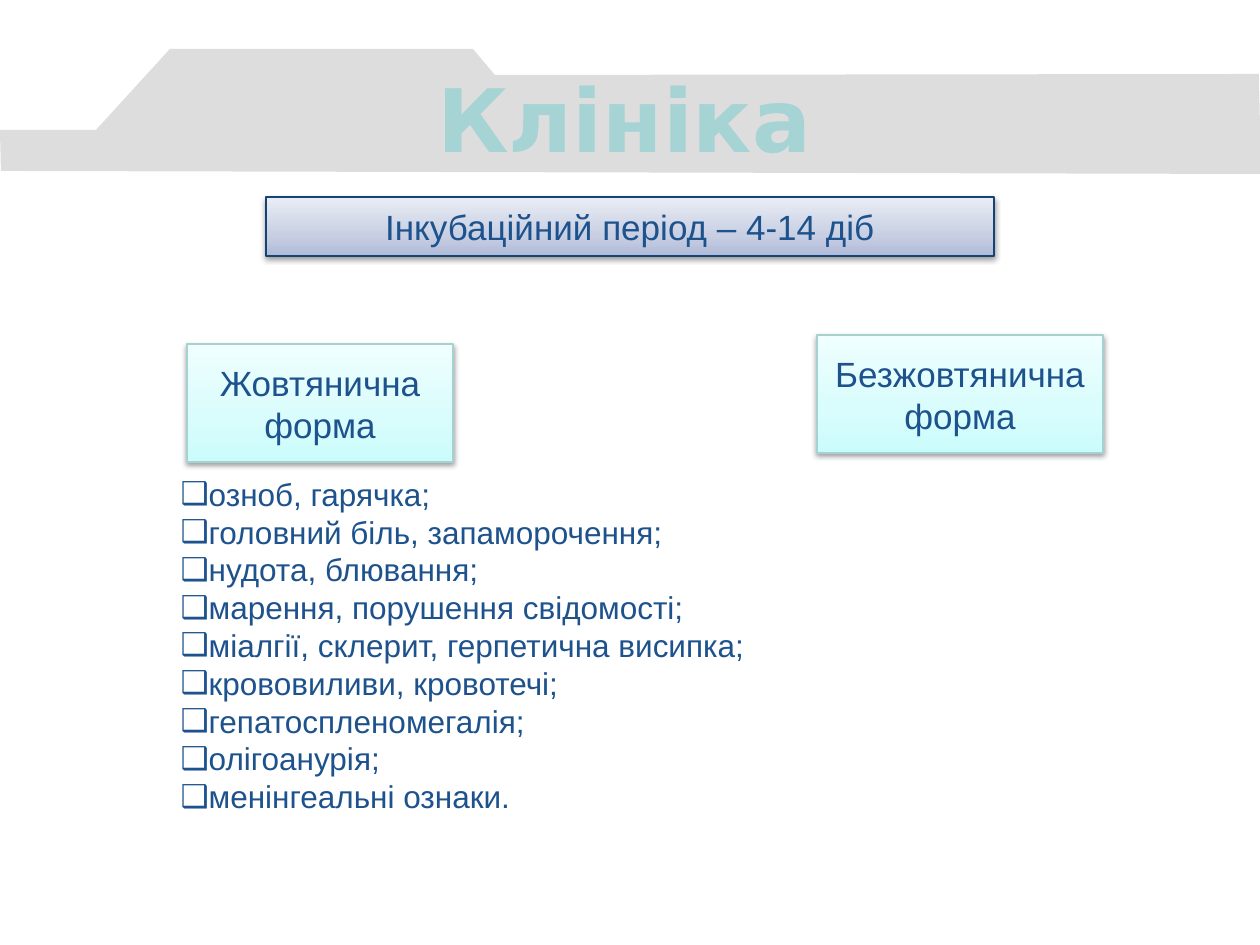
from lxml.etree import SubElement as Sub
from pptx import Presentation
from pptx.dml.color import RGBColor as RGB
from pptx.enum.shapes import MSO_SHAPE as Shape
from pptx.enum.text import MSO_ANCHOR as Anchor, MSO_AUTO_SIZE as Fit, PP_ALIGN as Align
from pptx.oxml import parse_xml
from pptx.oxml.ns import nsdecls, qn
from pptx.util import Pt

PX = 914400 / 126  # EMU in one px
HUE = {"band": "DDDDDD", "title": "A6D3D3", "text": "1D528D",
       "navy": "144378", "teal": "A7D1D1"}
BLUES = ["AFBBD8", "C8CFE3", "EAEDF5"]
AQUAS = ["CAFCFC", "D9FCFC", "EFFFFF"]


def emu(*nums):
    return [round(n * PX) for n in nums]


def write(shape, text, size=20, hue="text", font="Arial", bold=False,
          align=Align.CENTER, mark=None):
    frame = shape.text_frame
    frame.text = text
    frame.word_wrap = True
    frame.auto_size = Fit.NONE
    frame.vertical_anchor = Anchor.MIDDLE
    for para in frame.paragraphs:
        para.alignment = align
        para.space_before = Pt(0)
        if mark:
            props = para._p.get_or_add_pPr()
            props.set("marL", "0")
            props.set("indent", "0")
            Sub(props, qn("a:buFont"), typeface="Arial")
            Sub(props, qn("a:buChar"), char=mark)
        for run in para.runs:
            run.font.size = Pt(size)
            run.font.name = font
            run.font.bold = bold
            run.font.color.rgb = RGB.from_string(HUE[hue])


deck = Presentation()
deck.slide_width, deck.slide_height = emu(1260, 945)
slide = deck.slides.add_slide(deck.slide_layouts[1])
shapes = slide.shapes
title, body = slide.placeholders

# Grey band behind the title
edge = [(0, 130), (96, 130), (170, 49), (473, 49), (495, 75),
        (1259, 74), (1261, 174), (1, 171)]
path = shapes.build_freeform(*edge[0], scale=PX)
path.add_line_segments(edge[1:], close=True)
band = path.convert_to_shape()
band.shadow.inherit = False
band.fill.solid()
band.fill.fore_color.rgb = RGB.from_string(HUE["band"])
band.line.fill.background()
shapes._spTree.insert(2, band._element)

title.left, title.top, title.width, title.height = emu(84, 79, 1081, 78)
write(title, "Клініка", size=50, hue="title", font="DejaVu Sans", bold=True)

# Shaded boxes
boxes = [
    ("Інкубаційний період – 4-14 діб", (266, 197, 728, 59), BLUES, "navy"),
    ("Жовтянична форма", (187, 344, 266, 118), AQUAS, "teal"),
    ("Безжовтянична форма", (817, 335, 286, 118), AQUAS, "teal"),
]
for text, place, shades, rim in boxes:
    box = shapes.add_shape(Shape.RECTANGLE, *emu(*place))
    box.line.color.rgb = RGB.from_string(HUE[rim])
    box.line.width = Pt(0.75)
    stops = "".join(f'<a:gs pos="{pos}000"><a:srgbClr val="{shade}"/></a:gs>'
                    for pos, shade in zip((0, 35, 100), shades))
    props = box._element.spPr
    props.find(qn("a:prstGeom")).addnext(parse_xml(
        f'<a:gradFill {nsdecls("a")} rotWithShape="1"><a:gsLst>{stops}</a:gsLst>'
        '<a:lin ang="16200000" scaled="0"/></a:gradFill>'))
    props.append(parse_xml(
        f'<a:effectLst {nsdecls("a")}><a:outerShdw blurRad="40000" dist="20000" '
        'dir="5400000" rotWithShape="0"><a:srgbClr val="000000">'
        '<a:alpha val="38000"/></a:srgbClr></a:outerShdw></a:effectLst>'))
    write(box, text)

signs = [
    "озноб, гарячка;",
    "головний біль, запаморочення;",
    "нудота, блювання;",
    "марення, порушення свідомості;",
    "міалгії, склерит, герпетична висипка;",
    "крововиливи, кровотечі;",
    "гепатоспленомегалія;",
    "олігоанурія;",
    "менінгеальні ознаки.",
]
body.left, body.top, body.width, body.height = emu(168, 473, 591, 344)
write(body, "\n".join(signs), size=18, align=Align.LEFT, mark="❑")

deck.save("out.pptx")
